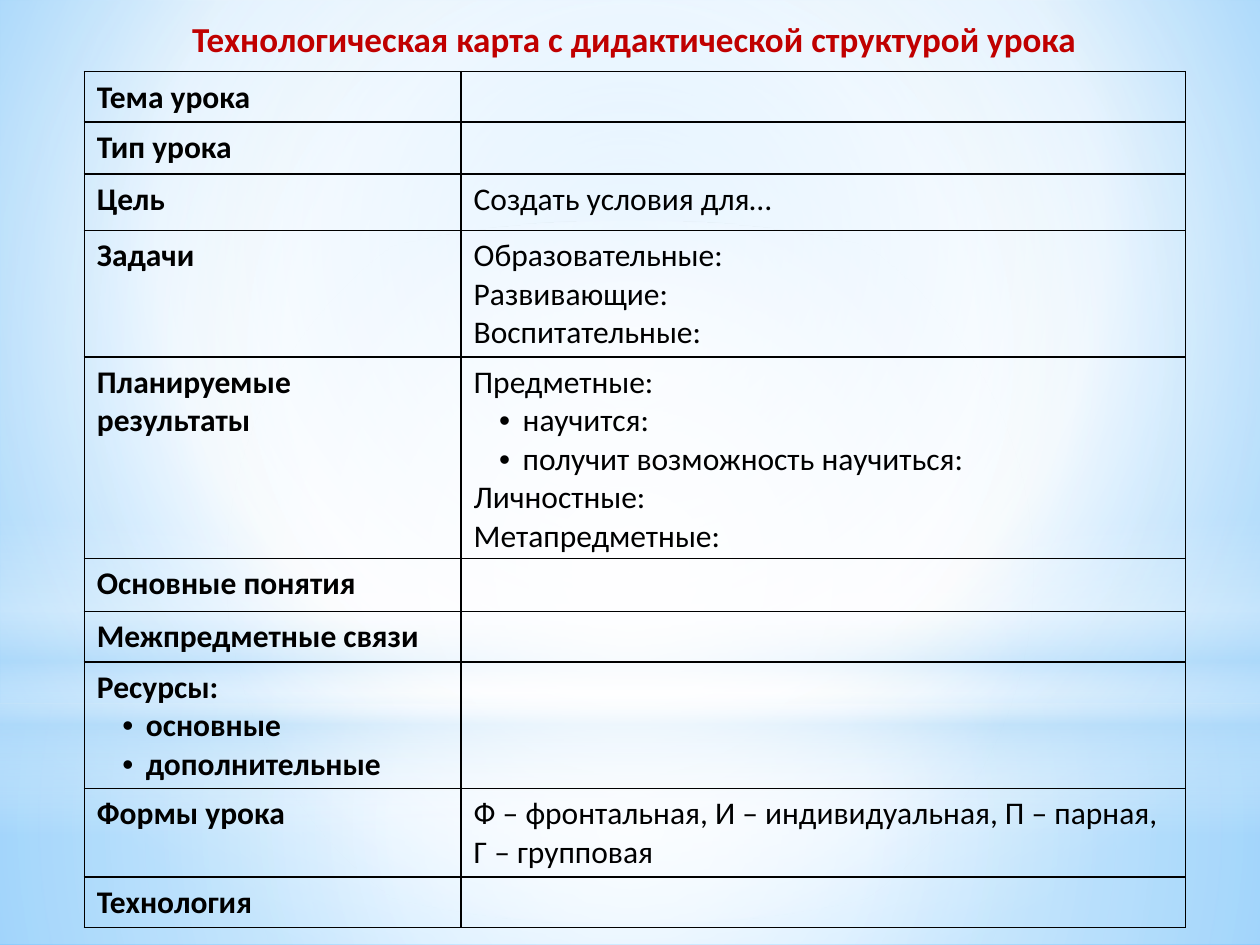
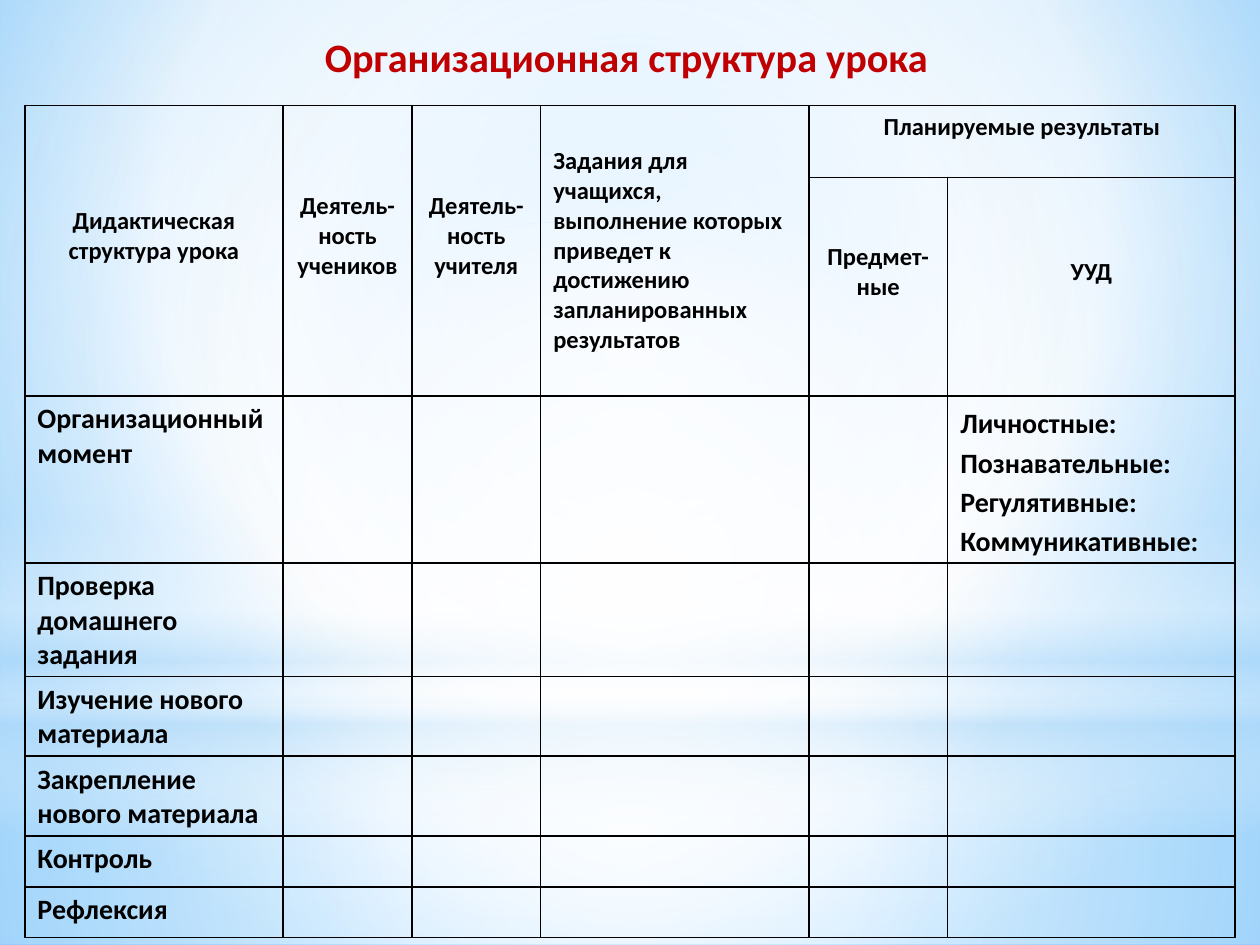
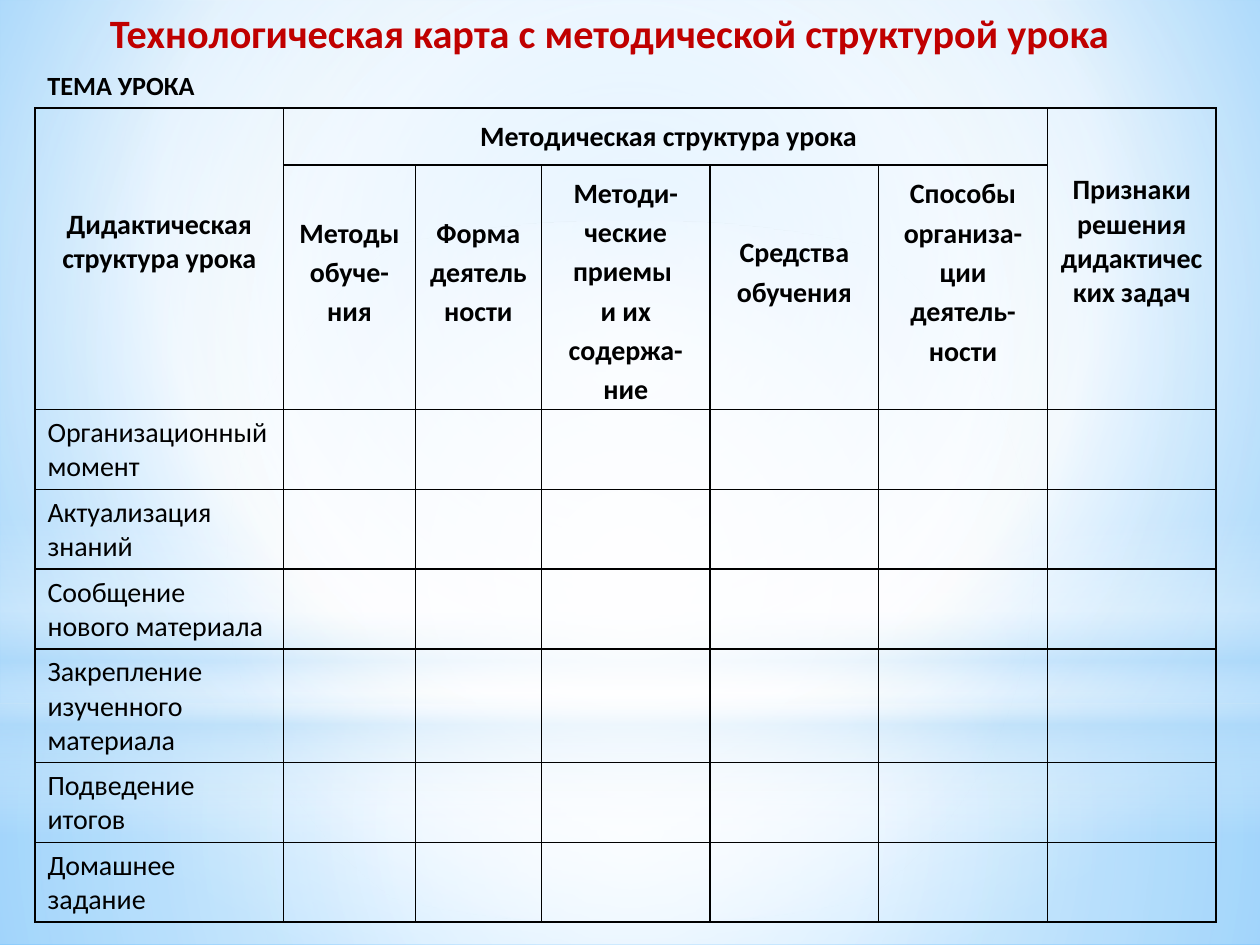
from dataclasses import dataclass
from functools import partial

from pptx import Presentation
from pptx.dml.color import RGBColor
from pptx.enum.shapes import MSO_SHAPE as Preset
from pptx.enum.text import MSO_ANCHOR as Anchor, PP_ALIGN as Align
from pptx.oxml import parse_xml
from pptx.oxml.ns import nsdecls, qn
from pptx.util import Pt


@dataclass(frozen=True)
class Theme:
    font: str = "Calibri"
    title: str = "C00000"
    ink: str = "000000"
    white: str = "FFFFFF"
    haze: str = "B4DCFA"
    sky: str = "9ED5FF"
    deep_sky: str = "5BB9FF"
    title_size: int = 23
    small_title_size: int = 20
    body_size: int = 18
    stage_size: int = 16
    topic_size: int = 15
    header_size: int = 14
    border: float = 1


THEME = Theme()


@dataclass(frozen=True)
class Entry:
    text: str
    size: float = THEME.body_size
    bold: bool = False
    align: Align = Align.LEFT
    anchor: Anchor = Anchor.TOP
    spacing: float = 1.0
    gap_below: float = 0


def paint_gradient(fill, element, stops, focus=None):
    fill.solid()
    solid = element.find(".//" + qn("a:solidFill"))
    colours = "".join(
        f'<a:gs pos="{pos * 1000}"><a:srgbClr val="{colour}">'
        f'<a:alpha val="{opacity * 1000}"/></a:srgbClr></a:gs>'
        for pos, colour, opacity in stops
    )
    if focus:
        left, top, right, bottom = (side * 1000 for side in focus)
        direction = (
            f'<a:path path="circle"><a:fillToRect l="{left}" t="{top}" '
            f'r="{right}" b="{bottom}"/></a:path>'
        )
    else:
        direction = '<a:lin ang="5400000" scaled="0"/>'
    gradient = parse_xml(
        f'<a:gradFill {nsdecls("a")} rotWithShape="1">'
        f"<a:gsLst>{colours}</a:gsLst>{direction}</a:gradFill>"
    )
    solid.getparent().replace(solid, gradient)


def build_backdrop(master, slide):
    white, haze = THEME.white, THEME.haze
    centre = (50, 50, 50, 50)
    paint_gradient(
        master.background.fill, master.element,
        [(0, THEME.sky, 100), (60, white, 100), (100, THEME.deep_sky, 100)],
        (20, 10, 20, 60),
    )
    layers = [
        (Preset.RECTANGLE, 402, 138, centre,
         [(0, white, 91), (37, white, 76), (100, haze, 79)]),
        (Preset.RECTANGLE, 0, 402, centre,
         [(0, white, 89), (48, white, 62), (100, haze, 79)]),
        (Preset.RECTANGLE, 296.6, 180, None,
         [(0, white, 0), (29, white, 30), (45, haze, 40),
          (55, white, 26), (65, haze, 60), (100, white, 0)]),
        (Preset.OVAL, 126, 402, centre,
         [(0, white, 100), (56, white, 0)]),
    ]
    master_tree = master.element.cSld.spTree
    for preset, top, height, focus, stops in layers:
        layer = slide.shapes.add_shape(preset, 0, Pt(top), Pt(720), Pt(height))
        layer.shadow.inherit = False
        layer.line.fill.background()
        paint_gradient(layer.fill, layer.element, stops, focus)
        master_tree.append(layer.element)


def style_runs(paragraph, size, bold, colour):
    for run in paragraph.runs:
        run.font.name = THEME.font
        run.font.size = Pt(size)
        run.font.bold = bold
        run.font.color.rgb = RGBColor.from_string(colour)


def add_caption(slide, text, left, top, width, height,
                size=THEME.title_size, colour=THEME.title,
                align=Align.CENTER, wrap=True):
    box = slide.shapes.add_textbox(Pt(left), Pt(top), Pt(width), Pt(height))
    frame = box.text_frame
    frame.word_wrap = wrap
    frame.text = text
    caption = frame.paragraphs[0]
    caption.alignment = align
    style_runs(caption, size, True, colour)


def add_bullet(paragraph):
    properties = paragraph._p.get_or_add_pPr()
    properties.set("marL", str(Pt(28)))
    properties.set("indent", str(Pt(-13.5)))
    properties.append(parse_xml(f'<a:buFont {nsdecls("a")} typeface="Arial"/>'))
    properties.append(parse_xml(f'<a:buChar {nsdecls("a")} char="•"/>'))


def draw_borders(cell):
    properties = cell._tc.get_or_add_tcPr()
    for side in ("lnL", "lnR", "lnT", "lnB"):
        properties.append(parse_xml(
            f'<a:{side} {nsdecls("a")} w="{Pt(THEME.border)}"><a:solidFill>'
            f'<a:srgbClr val="{THEME.ink}"/></a:solidFill></a:{side}>'
        ))


def fill_cell(cell, entry):
    cell.vertical_anchor = entry.anchor
    cell.margin_bottom = Pt(3.6 + entry.gap_below)
    lines = entry.text.split("\n")
    cell.text_frame.text = "\n".join(line.removeprefix("•") for line in lines)
    for line, paragraph in zip(lines, cell.text_frame.paragraphs):
        paragraph.alignment = entry.align
        if entry.spacing != 1:
            paragraph.line_spacing = entry.spacing
        if line.startswith("•"):
            add_bullet(paragraph)
        style_runs(paragraph, entry.size, entry.bold, THEME.ink)


def add_grid(slide, left, top, widths, heights, entries, merges=()):
    table = slide.shapes.add_table(
        len(heights), len(widths), Pt(left), Pt(top),
        Pt(sum(widths)), Pt(sum(heights)),
    ).table
    table.first_row = table.horz_banding = False
    for column, width in zip(table.columns, widths):
        column.width = Pt(width)
    for row, height in zip(table.rows, heights):
        row.height = Pt(height)
    for cell in table.iter_cells():
        draw_borders(cell)
        cell.fill.background()
    for first, last in merges:
        table.cell(*first).merge(table.cell(*last))
    for (row, column), entry in entries.items():
        fill_cell(table.cell(row, column), entry)


def build_didactic_map(slide):
    add_caption(slide, "Технологическая карта с дидактической структурой урока",
                25.2, 6.5, 674.6, 31.7, size=THEME.small_title_size)
    sections = [
        ("Тема урока", "", 28.8),
        ("Тип урока", "", 29.6),
        ("Цель", "Создать условия для…", 32.4),
        ("Задачи", "Образовательные:\nРазвивающие:\nВоспитательные:", 72.2),
        ("Планируемые результаты",
         "Предметные:\n•научится:\n•получит возможность научиться:\n"
         "Личностные:\nМетапредметные:", 115),
        ("Основные понятия", "", 30.3),
        ("Межпредметные связи", "", 28.7),
        ("Ресурсы:\n•основные\n•дополнительные", "", 72.2),
        ("Формы урока",
         "Ф – фронтальная, И – индивидуальная, П – парная, Г – групповая", 50.6),
        ("Технология", "", 28.8),
    ]
    entries = {}
    for row, (section, content, _) in enumerate(sections):
        entries[row, 0] = Entry(section, bold=True)
        if content:
            entries[row, 1] = Entry(content)
    heights = [height for _, _, height in sections]
    add_grid(slide, 48.2, 41, [215.3, 414], heights, entries)


def build_organisation(slide):
    add_caption(slide, "Организационная структура урока",
                178.6, 15.1, 362.9, 35.3, align=Align.LEFT, wrap=False)
    header = partial(Entry, size=THEME.header_size, bold=True,
                     align=Align.CENTER, anchor=Anchor.MIDDLE, gap_below=17)
    stage = partial(Entry, size=THEME.stage_size, bold=True)
    entries = {
        (0, 0): header("Дидактическая структура урока"),
        (0, 1): header("Деятель-ность учеников"),
        (0, 2): header("Деятель-ность учителя"),
        (0, 3): header("Задания для учащихся, выполнение которых приведет к "
                       "достижению запланированных результатов",
                       align=Align.LEFT, gap_below=0),
        (0, 4): header("Планируемые результаты"),
        (1, 4): header("Предмет-ные"),
        (1, 5): header("УУД"),
        (2, 5): stage("Личностные:\nПознавательные:\nРегулятивные:\n"
                      "Коммуникативные:", spacing=1.15),
    }
    stages = ["Организационный момент", "Проверка домашнего задания",
              "Изучение нового материала", "Закрепление нового материала",
              "Контроль", "Рефлексия"]
    entries.update({(row, 0): stage(name) for row, name in enumerate(stages, 2)})
    merges = [((0, column), (1, column)) for column in range(4)]
    merges.append(((0, 4), (0, 5)))
    add_grid(slide, 14.2, 60.3, [147.6, 73.6, 73.6, 153.2, 79.4, 164.2],
             [40.9, 124.9, 95.4, 64.6, 45.5, 45.5, 29.1, 29.1], entries, merges)


def build_method_map(slide):
    add_caption(slide, "Технологическая карта с методической структурой урока",
                0, 1.4, 697.7, 35.3)
    add_caption(slide, "ТЕМА УРОКА", 20, 36, 100, 25.2, size=THEME.topic_size,
                colour=THEME.ink, align=Align.LEFT, wrap=False)
    header = partial(Entry, size=THEME.stage_size, bold=True,
                     align=Align.CENTER, anchor=Anchor.MIDDLE, gap_below=19.5)
    stage = partial(Entry, size=THEME.stage_size, anchor=Anchor.MIDDLE)
    aspect = partial(header, spacing=1.15)
    entries = {
        (0, 0): header("Дидактическая структура урока"),
        (0, 1): header(" Методическая структура урока", gap_below=0),
        (0, 6): header("Признаки решения дидактических задач"),
        (1, 1): aspect("Методы\nобуче-ния"),
        (1, 2): aspect("Форма\nдеятельности"),
        (1, 3): aspect("Методи-ческие\nприемы \nи их\nсодержа-ние", gap_below=0),
        (1, 4): aspect("Средства\nобучения"),
        (1, 5): aspect("Способы\nорганиза-ции\nдеятель-ности"),
    }
    stages = ["Организационный момент", "Актуализация знаний",
              "Сообщение нового материала", "Закрепление изученного материала",
              "Подведение итогов", "Домашнее задание"]
    entries.update({(row, 0): stage(name) for row, name in enumerate(stages, 2)})
    merges = [((0, 0), (1, 0)), ((0, 1), (0, 5)), ((0, 6), (1, 6))]
    add_grid(slide, 20, 61.7, [142, 75.4, 72] + [96.4] * 4,
             [32.6, 139.7, 45.6, 45.6, 45.6, 64.9, 45.6, 45.6], entries, merges)


def main():
    deck = Presentation()
    deck.slide_width, deck.slide_height = Pt(720), Pt(540)
    blank = deck.slide_layouts[6]
    builders = (build_didactic_map, build_organisation, build_method_map)
    slides = [deck.slides.add_slide(blank) for _ in builders]
    build_backdrop(deck.slide_master, slides[0])
    for build, slide in zip(builders, slides):
        build(slide)
    deck.save("out.pptx")


if __name__ == "__main__":
    main()
